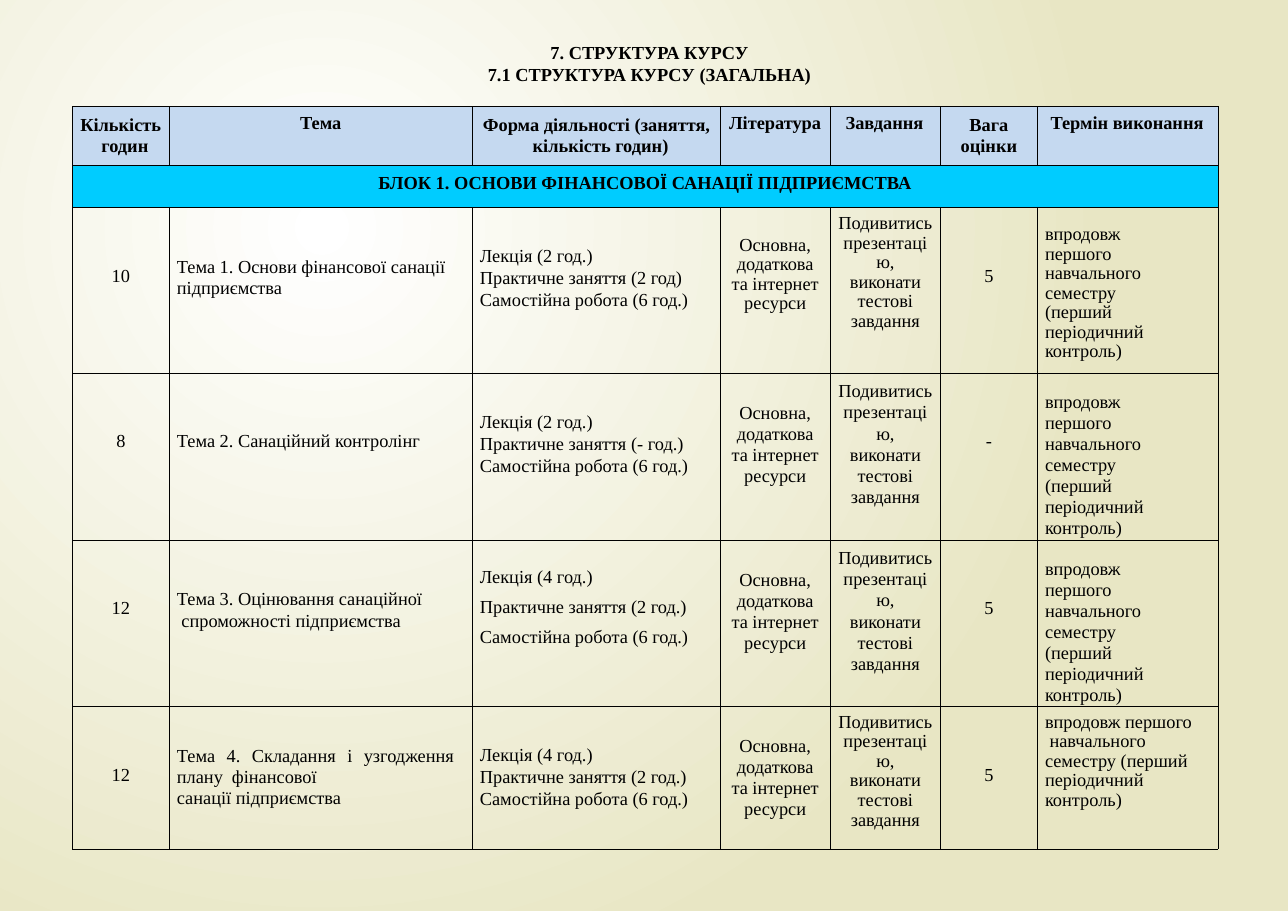
from dataclasses import dataclass, field

from lxml.etree import SubElement as Sub
from pptx import Presentation
from pptx.dml.color import RGBColor as Rgb
from pptx.enum.text import PP_ALIGN as Align
from pptx.oxml import parse_xml
from pptx.oxml.ns import nsdecls, qn
from pptx.util import Pt

HUES = {"ink": "000000", "head": "C5D9F0", "block": "00CCFF",
        "glow": "FFFFFF", "sand": "E8E6C4"}
FACE = "Times New Roman"
SIZE = 12
LINE, TIGHT = Pt(13.8), 0.96
COLS = [63.3, 198, 162, 72, 72, 63.3, 118]
ROWS = [38.6, 27.4, 107.8, 109.1, 108.6, 93.5]
PAD = 5
MID = {"alignment": Align.CENTER}

READ = "Основна,\vдодаткова\vта інтернет\vресурси"
TASK = "Подивитись\vпрезентаці\vю,\vвиконати\vтестові\vзавдання"
DUE = "впродовж\vпершого\vнавчального\vсеместру\v(перший\vперіодичний\vконтроль)"
LAST = "впродовж першого\v навчального\vсеместру (перший\vперіодичний\vконтроль)"
FORM = "Лекція ({} год.)\nПрактичне заняття ({}\nСамостійна робота (6 год.)"


@dataclass
class Item:
    text: str
    top: float = 0
    look: dict = field(default_factory=dict)
    line: float = LINE
    left: float = 0
    hang: float = 0
    right: float = 0
    tab: float = 0
    bold: bool = False
    fill: str = ""


@dataclass
class Topic:
    hours: str
    theme: Item
    form: Item
    weight: str
    tops: tuple[float, float, float]
    lines: tuple[float, float, float]
    due: str = DUE

    def items(self) -> list[Item]:
        read, task, due = self.tops
        gap, step, pace = self.lines
        return [
            Item(self.hours, 37.8, MID), self.theme, self.form,
            Item(READ, read, MID, gap), Item(TASK, task, MID, step),
            Item(self.weight, 37.8, MID),
            Item(self.due, due, line=pace, left=PAD),
        ]


def theme(text: str, top: float, **more) -> Item:
    return Item(text, top, left=PAD, **more)


def form(talk: str, work: str, top: float = 25, gap: float = 0.5) -> Item:
    return Item(FORM.format(talk, work), top, {"space_after": Pt(gap)}, left=PAD)


def head(text: str, top: float = 4.3, **more) -> Item:
    return Item(text, top, bold=True, fill="head", **more)


HEADS = [
    head("Кількість\vгодин", 5, left=19, hang=-13.8),
    head("Тема", look=MID),
    head("Форма діяльності (заняття,\vкількість годин)", 5, left=39.5, hang=-32.5),
    head("Література", left=5.8),
    head("Завдання", left=10),
    head("Вага\vоцінки", 5, look=MID),
    head("Термін виконання", left=8.6),
]
BLOCK = Item("БЛОК 1. ОСНОВИ ФІНАНСОВОЇ САНАЦІЇ ПІДПРИЄМСТВА", 4.3, MID,
             bold=True, fill="block")
TOPICS = [
    Topic("10", theme("Тема 1. Основи фінансової санації\vпідприємства", 32.2),
          form("2", "2 год)"), "5", (18.4, 4.3, 11.5), (TIGHT, TIGHT, TIGHT)),
    Topic("8", theme("Тема 2. Санаційний контролінг", 37.8),
          form("2", "- год.)"), "-", (19, 5, 11.8), (LINE, LINE, LINE)),
    Topic("12", theme("Тема 3. Оцінювання санаційної\v спроможності підприємства", 32),
          form("4", "2 год.)", 17.5, 5.6), "5", (19, 5, 11.8), (LINE, LINE, LINE)),
    Topic("12", theme("Тема 4. Складання і узгодження плану\tфінансової\vсанації підприємства",
                      25.8, look={"alignment": Align.JUSTIFY}, right=11.7, tab=68.6),
          form("4", "2 год.)"), "5", (19, 4.3, 4.3), (LINE, TIGHT, TIGHT), LAST),
]


def put(obj, vals: dict) -> None:
    """Set each named attribute of obj."""
    for name, val in vals.items():
        setattr(obj, name, val)


def write(frame, item: Item) -> None:
    frame.text = item.text.replace("\v", "\x0b") if "\n" not in item.text else ""
    parts = item.text.split("\n")
    for n, part in enumerate(parts):
        para = frame.paragraphs[0] if n == 0 else frame.add_paragraph()
        para.text = part
        put(para, {"line_spacing": item.line, **item.look})
        props = para._p.get_or_add_pPr()
        props.set("marL", str(Pt(item.left)))
        props.set("indent", str(Pt(item.hang)))
        if item.tab:
            tabs = Sub(props, qn("a:tabLst"))
            Sub(tabs, qn("a:tab"), pos=str(Pt(item.tab)), algn="l")
        for run in para.runs:
            put(run.font, {"name": FACE, "size": Pt(SIZE), "bold": item.bold})
            run.font.color.rgb = Rgb.from_string(HUES["ink"])
        for gap in para._p.findall(qn("a:br")):
            Sub(gap, qn("a:rPr"), sz=str(SIZE * 100))


def edge(cell) -> None:
    """Give the cell a thin line on all four sides."""
    props = cell._tc.get_or_add_tcPr()
    for side in ("lnL", "lnR", "lnT", "lnB"):
        line = Sub(props, qn(f"a:{side}"), w=str(Pt(0.5)))
        Sub(Sub(line, qn("a:solidFill")), qn("a:srgbClr"), val=HUES["ink"])


def dress(cell, item: Item) -> None:
    put(cell, {"margin_left": 0, "margin_right": Pt(item.right),
               "margin_top": Pt(item.top), "margin_bottom": 0})
    if item.fill:
        cell.fill.solid()
        cell.fill.fore_color.rgb = Rgb.from_string(HUES[item.fill])
    else:
        cell.fill.background()
    write(cell.text_frame, item)


def shade(slide) -> None:
    """Fill the background with a round glow."""
    stops = "".join(f'<a:gs pos="{pos}"><a:srgbClr val="{HUES[hue]}"/></a:gs>'
                    for pos, hue in ((0, "glow"), (100000, "sand")))
    slide.element.cSld.insert(0, parse_xml(
        f'<p:bg {nsdecls("p", "a")}><p:bgPr><a:gradFill rotWithShape="1">'
        f'<a:gsLst>{stops}</a:gsLst><a:path path="circle">'
        '<a:fillToRect l="50000" t="50000" r="100000" b="100000"/></a:path>'
        '</a:gradFill><a:effectLst/></p:bgPr></p:bg>'))


def title(slide) -> None:
    box = slide.shapes.add_textbox(Pt(315), Pt(26.6), Pt(219), Pt(30)).text_frame
    put(box, {"word_wrap": True, "margin_left": 0, "margin_right": 0,
              "margin_top": Pt(0.9), "margin_bottom": 0})
    write(box, Item("7. СТРУКТУРА КУРСУ\n7.1 СТРУКТУРА КУРСУ (ЗАГАЛЬНА)",
                    look=MID, line=Pt(14.1), bold=True))


def grid(slide) -> None:
    table = slide.shapes.add_table(len(ROWS), len(COLS), Pt(47.3), Pt(69.5),
                                   Pt(sum(COLS)), Pt(sum(ROWS))).table
    put(table, {"first_row": False, "horz_banding": False})
    for col, width in zip(table.columns, COLS):
        col.width = Pt(width)
    for row, height in zip(table.rows, ROWS):
        row.height = Pt(height)
    for cell in table.iter_cells():
        edge(cell)
    table.cell(1, 0).merge(table.cell(1, len(COLS) - 1))
    for r, items in enumerate([HEADS, [BLOCK], *(t.items() for t in TOPICS)]):
        for c, item in enumerate(items):
            dress(table.cell(r, c), item)


def main() -> None:
    deck = Presentation()
    put(deck, {"slide_width": Pt(841.7), "slide_height": Pt(595.4)})
    slide = deck.slides.add_slide(deck.slide_layouts[6])
    shade(slide)
    title(slide)
    grid(slide)
    deck.save("out.pptx")


if __name__ == "__main__":
    main()
